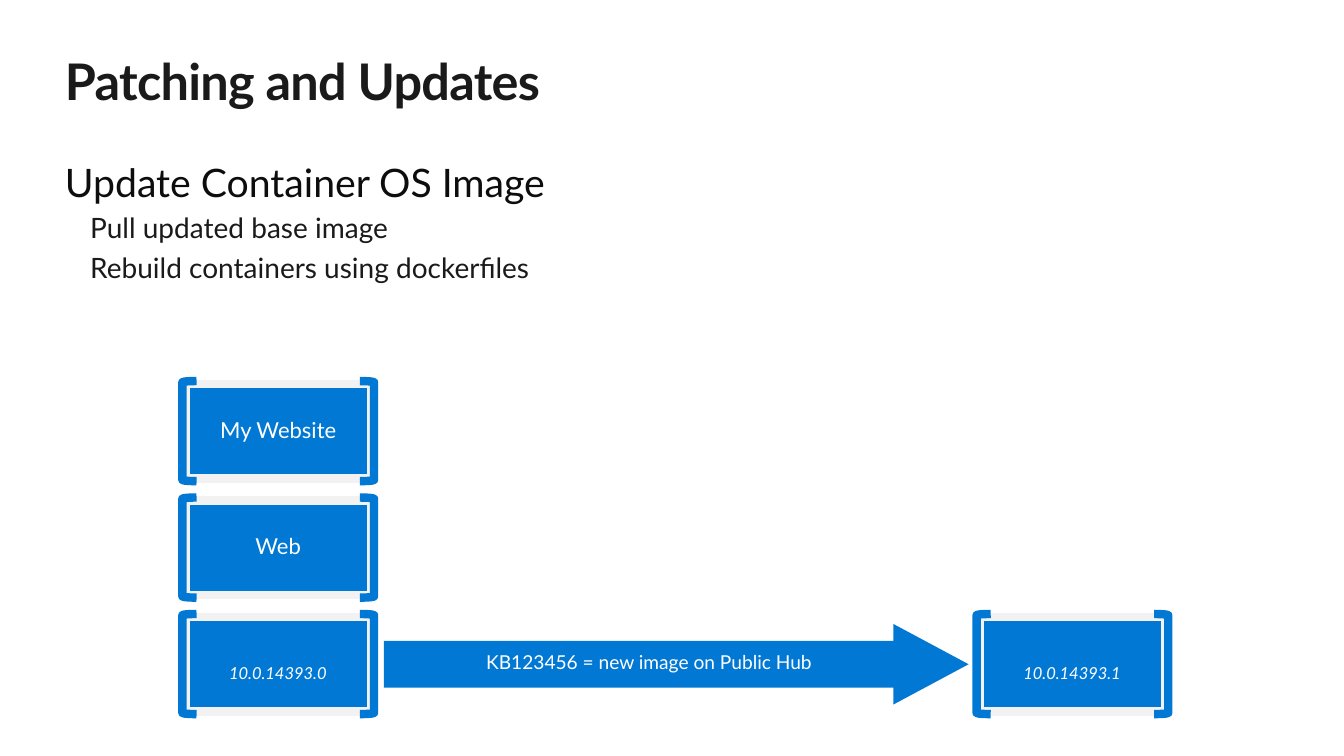
from pptx import Presentation
from pptx.dml.color import RGBColor as Rgb
from pptx.enum.shapes import MSO_SHAPE as Shape
from pptx.enum.text import MSO_ANCHOR as Anchor, PP_ALIGN as Align
from pptx.util import Pt

BLUE, PALE, WHITE = "0078D4", "F2F2F2", "FFFFFF"
DARK, BLACK = "1A1A1A", "0D0D0D"
WIDE, HIGH, STEP = 132.5, 67.7, 83.2  # block size and stack pitch


def color(code):
    return Rgb.from_string(code)


def style(para, size, code):
    font = para.font
    font.name, font.size = "Lato", Pt(size)
    font.color.rgb = color(code)
    return font


def inset(frame, side=0, top=0):
    frame.word_wrap = True
    frame.margin_left = frame.margin_right = Pt(side)
    frame.margin_top = frame.margin_bottom = Pt(top)


def add_box(shapes, x, y, w, h):
    box = shapes.add_textbox(Pt(x), Pt(y), Pt(w), Pt(h))
    inset(box.text_frame)
    return box.text_frame


def add_part(shapes, kind, x, y, w, h, fill=None, line=None):
    part = shapes.add_shape(kind, Pt(x), Pt(y), Pt(w), Pt(h))
    part.shadow.inherit = False
    if fill:
        part.fill.solid()
        part.fill.fore_color.rgb = color(fill)
    else:
        part.fill.background()
    if line:
        part.line.color.rgb = color(line)
        part.line.width = Pt(6)
    else:
        part.line.fill.background()
    return part


def label(frame, text, size, anchor=Anchor.MIDDLE):
    inset(frame, 14.4, 11.5)
    frame.vertical_anchor = anchor
    para = frame.paragraphs[0]
    para.text = text
    para.alignment, para.line_spacing = Align.CENTER, 0.9
    return style(para, size, WHITE)


def add_title(shapes, x, y, w, h):
    para = add_box(shapes, x, y, w, h).paragraphs[0]
    run = para.add_run()
    run.text = "Patching and Updates"
    style(para, 36, DARK).bold = True
    run.font._element.set("spc", "-50")  # tighter letters


def add_body(shapes, x, y, w, h):
    frame = add_box(shapes, x, y, w, h)
    head = frame.paragraphs[0]
    head.text = "Update Container OS Image"
    style(head, 28, BLACK)
    for text in ("Pull updated base image", "Rebuild containers using dockerfiles"):
        para = frame.add_paragraph()
        para.text, para.level = text, 1
        para._p.get_or_add_pPr().set("marL", str(Pt(18)))
        para._p.get_or_add_pPr().set("indent", "0")
        para.space_before = Pt(4)
        style(para, 20, DARK)


def add_block(shapes, x, y, w, h, text, base=False):
    group = shapes.add_group_shape().shapes
    rect = add_part(group, Shape.RECTANGLE, x, y, w, h, BLUE, PALE)
    # Brackets reach slightly past the block
    for kind, left in ((Shape.RIGHT_BRACKET, x + w - 7.9),
                       (Shape.LEFT_BRACKET, x - 2.2)):
        add_part(group, kind, left, y - 2, 10.1, h + 3.8, line=BLUE)
    if base:
        frame = add_box(group, x + 3, y + 28.1, w - 6.5, 35.3)
        label(frame, text, 11.8, Anchor.TOP).italic = True
    else:
        label(rect.text_frame, text, 15.7)


def add_arrow(shapes, x, y, w, h):
    group = shapes.add_group_shape().shapes
    arrow = add_part(group, Shape.RIGHT_ARROW, x, y, w, h, BLUE)
    arrow.adjustments[0], arrow.adjustments[1] = 0.582, 0.934
    frame = add_box(group, x, y + 9.4, w - 38.9, 37.4)
    label(frame, "KB123456 = new image on Public Hub", 13.7)


def add_stack(shapes, x, y, names):
    for row, name in enumerate(names):
        base = row == len(names) - 1
        add_block(shapes, x, y + row * STEP, WIDE, HIGH, name, base)


def main():
    deck = Presentation()
    deck.slide_width, deck.slide_height = Pt(960), Pt(540)
    shapes = deck.slides.add_slide(deck.slide_layouts[6]).shapes
    # Heading and text
    add_title(shapes, 46.4, 36, 867.6, 43.9)
    add_body(shapes, 46.4, 113, 422, 150.5)
    # Image layers and the update
    add_arrow(shapes, 274.3, 445.7, 417.6, 57.6)
    add_stack(shapes, 132.5, 274.2, ("My Website", "Web", "10.0.14393.0"))
    add_stack(shapes, 699.8, 274.2 + 2 * STEP, ("10.0.14393.1",))
    deck.save("out.pptx")


if __name__ == "__main__":
    main()
